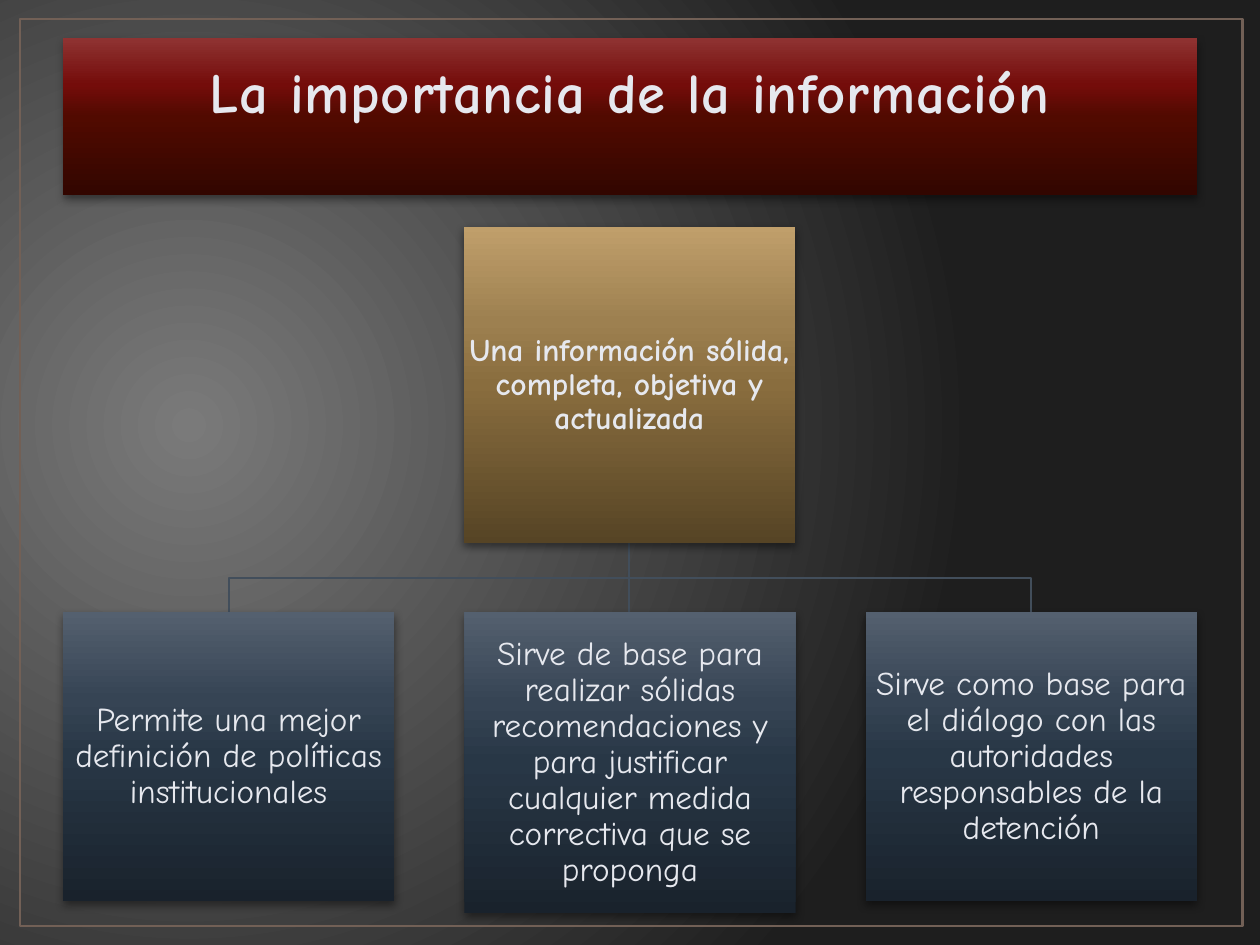
from dataclasses import dataclass

from lxml import etree
from pptx import Presentation
from pptx.dml.color import RGBColor
from pptx.enum.shapes import MSO_CONNECTOR, MSO_SHAPE
from pptx.enum.text import MSO_ANCHOR, MSO_AUTO_SIZE, PP_ALIGN
from pptx.oxml import parse_xml
from pptx.oxml.ns import nsdecls, qn
from pptx.util import Inches, Pt

RECTANGLE = MSO_SHAPE.RECTANGLE
STRAIGHT = MSO_CONNECTOR.STRAIGHT
MIDDLE = MSO_ANCHOR.MIDDLE
TOP = MSO_ANCHOR.TOP
CENTER = PP_ALIGN.CENTER
NO_AUTOFIT = MSO_AUTO_SIZE.NONE
TITLE_ONLY = 5

Stops = tuple[tuple[int, str], ...]


@dataclass(frozen=True)
class Theme:
    font: str = "Comic Neue"
    text: str = "E6E8EE"
    frame: str = "726056"
    connector: str = "424E5B"
    title_outline: str = "560000"
    background: Stops = ((0, "7A7A7A"), (100, "1E1E1E"))
    red: Stops = ((0, "320600"), (50, "510A00"), (70, "740C0A"), (100, "8F3332"))
    gold: Stops = ((0, "564425"), (50, "896D3E"), (70, "9D8050"), (100, "C09F6B"))
    blue: Stops = ((0, "19222C"), (50, "283746"), (70, "364454"), (100, "54606F"))
    title_size: float = 32.4
    root_size: float = 18
    branch_size: float = 19


@dataclass(frozen=True)
class Box:
    text: str
    left: float
    top: float
    height: float
    stops: Stops
    size: float
    bold: bool = False
    width: float = 2.63

    @property
    def center(self) -> float:
        return self.left + self.width / 2

    @property
    def bottom(self) -> float:
        return self.top + self.height


THEME = Theme()
LINEAR = '<a:lin ang="16200000" scaled="0"/>'
RADIAL = (
    '<a:path path="circle">'
    '<a:fillToRect l="15000" t="50000" r="85000" b="60000"/></a:path>'
)
ROOT = Box(
    "Una información sólida, completa, objetiva y actualizada",
    3.68, 1.8, 2.51, THEME.gold, THEME.root_size, True,
)
BRANCH_TEXTS = (
    ("Permite una mejor definición de políticas institucionales", 2.29),
    (
        "Sirve de base para realizar sólidas recomendaciones y para justificar "
        "cualquier medida correctiva que se proponga",
        2.39,
    ),
    (
        "Sirve como base para el diálogo con las autoridades responsables "
        "de la detención",
        2.29,
    ),
)
BRANCH_STEP = 3.185
BRANCHES = [
    Box(text, 0.5 + index * BRANCH_STEP, 4.86, height, THEME.blue, THEME.branch_size)
    for index, (text, height) in enumerate(BRANCH_TEXTS)
]


def gradient(stops: Stops, direction: str) -> etree.ElementBase:
    stop_xml = "".join(
        f'<a:gs pos="{position * 1000}"><a:srgbClr val="{color}"/></a:gs>'
        for position, color in stops
    )
    return parse_xml(
        f'<a:gradFill {nsdecls("a")} rotWithShape="1">'
        f"<a:gsLst>{stop_xml}</a:gsLst>{direction}</a:gradFill>"
    )


def replace_solid_fill(parent, fill) -> None:
    solid = parent.find(qn("a:solidFill"))
    parent.replace(solid, fill)


def paint_panel(shape, stops: Stops) -> None:
    shape.fill.solid()
    replace_solid_fill(shape.element.spPr, gradient(stops, LINEAR))
    shape.line.fill.background()
    shape.shadow.inherit = False
    effects = shape.element.spPr.find(qn("a:effectLst"))
    effects.append(parse_xml(
        f'<a:outerShdw {nsdecls("a")} blurRad="{Pt(5)}" dist="{Pt(2)}" '
        'dir="5400000" algn="ctr" rotWithShape="0">'
        '<a:srgbClr val="000000"><a:alpha val="43000"/></a:srgbClr></a:outerShdw>'
    ))


def write_text(shape, text: str, *, size: float, bold: bool, anchor,
               line_spacing: float = 1.0, inset: float = 0.01):
    frame = shape.text_frame
    frame.word_wrap = True
    frame.auto_size = NO_AUTOFIT
    frame.vertical_anchor = anchor
    frame.margin_left = frame.margin_right = Inches(0.01)
    frame.margin_top = frame.margin_bottom = Inches(inset)
    paragraph = frame.paragraphs[0]
    paragraph.alignment = CENTER
    paragraph.line_spacing = line_spacing
    run = paragraph.add_run()
    run.text = text
    run.font.name = THEME.font
    run.font.size = Pt(size)
    run.font.bold = bold
    run.font.color.rgb = RGBColor.from_string(THEME.text)
    return run


def add_frame(slide) -> None:
    frame = slide.shapes.add_shape(
        RECTANGLE, Inches(0.16), Inches(0.15), Inches(9.7), Inches(7.2)
    )
    frame.fill.background()
    frame.line.color.rgb = RGBColor.from_string(THEME.frame)
    frame.line.width = Pt(1.5)
    frame.shadow.inherit = False
    slide.shapes._spTree.insert(2, frame.element)


def format_title(title) -> None:
    title.left, title.top = Inches(0.5), Inches(0.3)
    title.width, title.height = Inches(9), Inches(1.25)
    paint_panel(title, THEME.red)
    run = write_text(title, "La importancia de la información",
                     size=THEME.title_size, bold=True, anchor=TOP, inset=0.15)
    properties = run.font._element
    properties.set("spc", "50")
    properties.insert(0, parse_xml(
        f'<a:ln {nsdecls("a")} w="{Pt(1.05)}"><a:solidFill>'
        f'<a:srgbClr val="{THEME.title_outline}"/></a:solidFill></a:ln>'
    ))


def add_link(slide, parent: Box, child: Box) -> None:
    start = Inches(parent.center), Inches(parent.bottom)
    end = Inches(child.center), Inches(child.top)
    if abs(parent.center - child.center) < 0.02:
        link = slide.shapes.add_connector(STRAIGHT, *start, start[0], end[1])
        etree.SubElement(link.element.spPr, qn("a:effectLst"))
    else:
        middle = (start[1] + end[1]) // 2
        builder = slide.shapes.build_freeform(*start)
        builder.add_line_segments(
            [(start[0], middle), (end[0], middle), end], close=False
        )
        link = builder.convert_to_shape()
        link.fill.background()
        link.shadow.inherit = False
    link.line.color.rgb = RGBColor.from_string(THEME.connector)
    link.line.width = Pt(1.25)


def add_box(slide, box: Box) -> None:
    shape = slide.shapes.add_shape(
        RECTANGLE, Inches(box.left), Inches(box.top),
        Inches(box.width), Inches(box.height),
    )
    paint_panel(shape, box.stops)
    write_text(shape, box.text, size=box.size, bold=box.bold,
               anchor=MIDDLE, line_spacing=0.9)


def main() -> None:
    presentation = Presentation()
    presentation.slide_width = Inches(10)
    presentation.slide_height = Inches(7.5)
    slide = presentation.slides.add_slide(presentation.slide_layouts[TITLE_ONLY])
    slide.background.fill.solid()
    background = slide.element.find(f".//{qn('p:bgPr')}")
    replace_solid_fill(background, gradient(THEME.background, RADIAL))
    add_frame(slide)
    format_title(slide.shapes.title)
    for branch in BRANCHES:
        add_link(slide, ROOT, branch)
    for box in (ROOT, *BRANCHES):
        add_box(slide, box)
    presentation.save("out.pptx")


if __name__ == "__main__":
    main()
